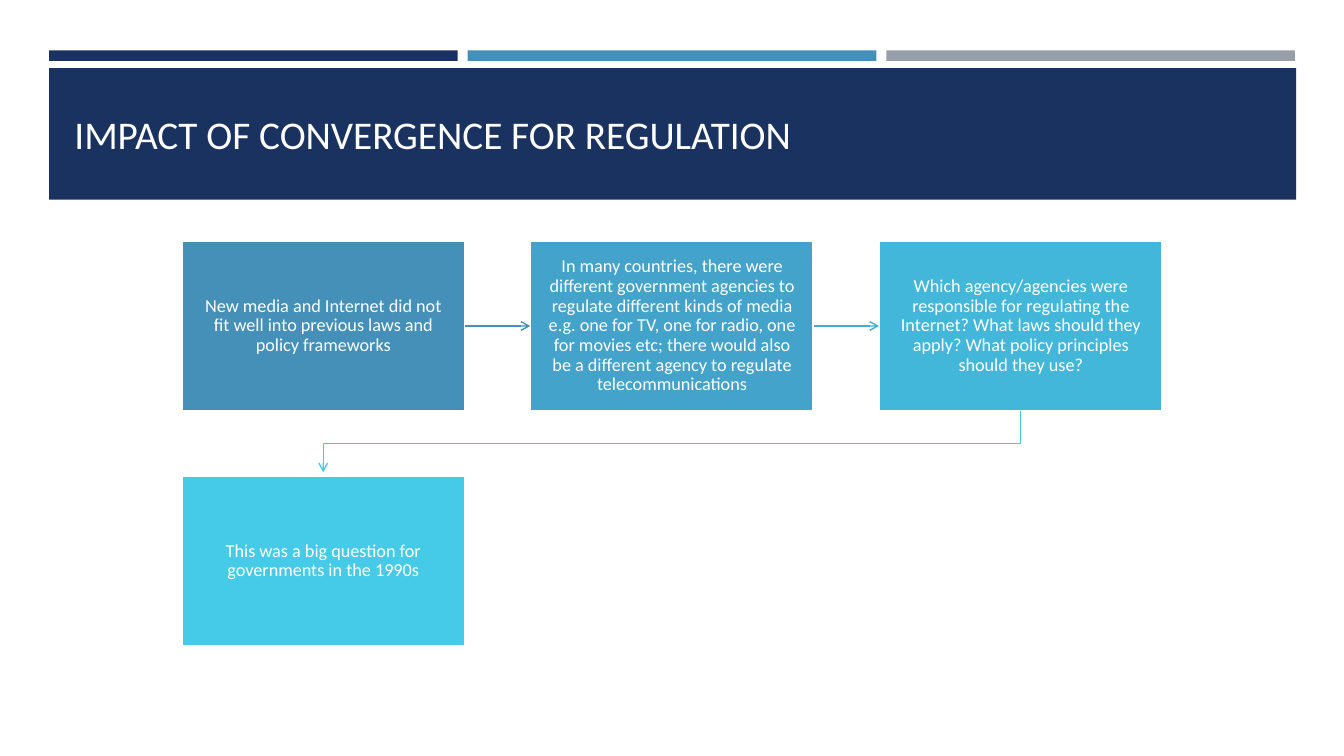
from dataclasses import dataclass

from lxml import etree
from pptx import Presentation
from pptx.dml.color import RGBColor
from pptx.enum.shapes import MSO_CONNECTOR, MSO_SHAPE
from pptx.enum.text import MSO_ANCHOR, PP_ALIGN
from pptx.oxml.ns import qn
from pptx.util import Inches, Pt

RECT = MSO_SHAPE.RECTANGLE
STRAIGHT = MSO_CONNECTOR.STRAIGHT
MIDDLE = MSO_ANCHOR.MIDDLE
LEFT = PP_ALIGN.LEFT
CENTER = PP_ALIGN.CENTER


@dataclass(frozen=True)
class Theme:
    font: str = "Calibri"
    navy: str = "1A3260"
    bars: tuple = ("1A3260", "4590B8", "969FA7")
    steps: tuple = ("4590B8", "43A3CA", "43B7DA", "45CBE8")
    links: tuple = ("4590B8", "43ADD2", "45CBE8")
    white: str = "FFFFFF"
    title: str = "FFFEFF"
    large: float = 28
    small: float = 13
    edge: float = 1.75
    thin: float = 1


def write(frame, text, size, color, font, align=LEFT, inset=(0.1, 0.05), space=1.0):
    frame.word_wrap = True
    frame.vertical_anchor = MIDDLE
    frame.margin_left = frame.margin_right = Inches(inset[0])
    frame.margin_top = frame.margin_bottom = Inches(inset[1])
    para = frame.paragraphs[0]
    para.alignment = align
    para.line_spacing = space
    run = para.add_run()
    run.text = text
    run.font.name = font
    run.font.size = Pt(size)
    run.font.color.rgb = RGBColor.from_string(color)


class Board:
    def __init__(self, deck, theme, cols=100, rows=100):
        self.theme = theme
        self.slide = deck.slides.add_slide(deck.slide_layouts[6])
        self.shapes = self.slide.shapes
        self.col = deck.slide_width / cols
        self.row = deck.slide_height / rows

    def point(self, x, y):
        return round(x * self.col), round(y * self.row)

    def area(self, x, y, w, h):
        return self.point(x, y) + self.point(w, h)

    def block(self, x, y, w, h, fill, edge=None):
        shape = self.shapes.add_shape(RECT, *self.area(x, y, w, h))
        shape.shadow.inherit = False
        shape.fill.solid()
        shape.fill.fore_color.rgb = RGBColor.from_string(fill)
        if edge:
            shape.line.color.rgb = RGBColor.from_string(edge)
            shape.line.width = Pt(self.theme.edge)
        else:
            shape.line.fill.background()
        return shape

    def step(self, x, y, w, h, text, fill):
        look = self.theme
        shape = self.block(x, y, w, h, fill, look.white)
        write(shape.text_frame, text, look.small, look.white, look.font,
              align=CENTER, inset=(0.14, 0.14), space=0.9)
        return shape

    def title(self, x, y, w, h, text):
        look = self.theme
        box = self.shapes.add_textbox(*self.area(x, y, w, h))
        write(box.text_frame, text, look.large, look.title, look.font)

    def tip(self, shape, color):
        shape.line.color.rgb = RGBColor.from_string(color)
        shape.line.width = Pt(self.theme.thin)
        line = shape.line._get_or_add_ln()
        etree.SubElement(line, qn("a:tailEnd"), type="arrow")

    def link(self, first, second, color):
        arrow = self.shapes.add_connector(STRAIGHT, 0, 0, 0, 0)
        arrow.begin_connect(first, 3)
        arrow.end_connect(second, 1)
        self.tip(arrow, color)
        etree.SubElement(arrow._element.spPr, qn("a:effectLst"))

    def route(self, points, color):
        start, *rest = [self.point(x, y) for x, y in points]
        maker = self.shapes.build_freeform(*start)
        maker.add_line_segments(rest, close=False)
        shape = maker.convert_to_shape()
        shape.shadow.inherit = False
        shape.fill.background()
        self.tip(shape, color)


STEPS = (
    "New media and Internet did not fit well into previous laws and policy frameworks",
    "In many countries, there were different government agencies to regulate "
    "different kinds of media e.g. one for TV, one for radio, one for movies etc; "
    "there would also be a different agency to regulate telecommunications",
    "Which agency/agencies were responsible for regulating the Internet? What laws "
    "should they apply? What policy principles should they use?",
    "This was a big question for governments in the 1990s",
)


def main():
    deck = Presentation()
    deck.slide_width = Inches(13.33)
    deck.slide_height = Inches(7.5)
    theme = Theme()
    board = Board(deck, theme)

    edge = 3.65
    for i, fill in enumerate(theme.bars):
        board.block(edge + i * 31.15, 6.67, 30.4, 1.4, fill)
    board.block(edge, 9, 92.8, 17.4, theme.navy)
    board.title(4.8, 10.27, 90.45, 14.8, "IMPACT OF CONVERGENCE FOR REGULATION")

    left, top, wide, high = 13.5, 31.87, 21.1, 22.5
    across, down, per = 25.95, 31.1, 3
    steps = []
    for i, (text, fill) in enumerate(zip(STEPS, theme.steps)):
        row, col = divmod(i, per)
        steps.append(board.step(left + col * across, top + row * down,
                                wide, high, text, fill))

    for first, second, color in zip(steps, steps[1:per], theme.links):
        board.link(first, second, color)

    start = left + wide / 2
    end = start + (per - 1) * across
    base = top + high
    turn = (base + top + down) / 2
    board.route([(end, base), (end, turn), (start, turn),
                 (start, top + down - 0.5)], theme.links[-1])

    deck.save("out.pptx")


if __name__ == "__main__":
    main()
